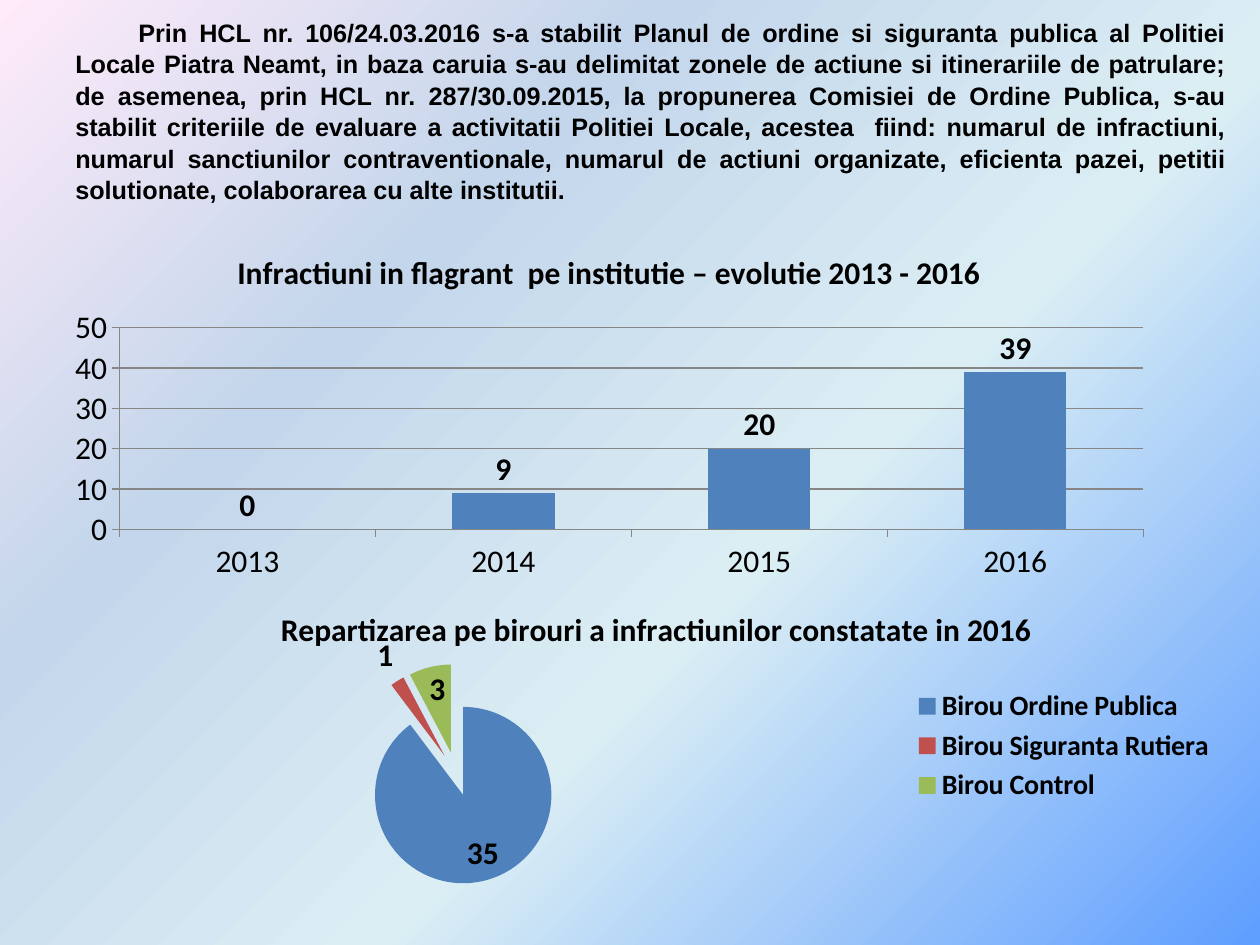
from lxml import etree
from pptx import Presentation
from pptx import util as u
from pptx.chart.data import CategoryChartData
from pptx.dml.color import RGBColor
from pptx.enum import chart as ch, text
from pptx.oxml import parse_xml
from pptx.oxml.ns import nsdecls, qn

W, H = 10, 7.5
COLORS = {"text": "000000", "grid": "868686",
          "blue": "4F81BD", "red": "C0504D", "green": "9BBB59"}
BACKGROUND = [(0, "5E9EFF"), (40, "DBEEF4"), (70, "C4D6EB"), (100, "FFEBFA")]

INTRO = ("Prin HCL nr. 106/24.03.2016 s-a stabilit Planul de ordine si siguranta "
         "publica al Politiei Locale Piatra Neamt, in baza caruia s-au delimitat "
         "zonele de actiune si itinerariile de patrulare; de asemenea, prin HCL nr. "
         "287/30.09.2015, la propunerea Comisiei de Ordine Publica, s-au stabilit "
         "criteriile de evaluare a activitatii Politiei Locale, acestea  fiind: "
         "numarul de infractiuni, numarul sanctiunilor contraventionale, numarul de "
         "actiuni organizate, eficienta pazei, petitii solutionate, colaborarea cu "
         "alte institutii.")


def rgb(name):
    return RGBColor.from_string(COLORS[name])


def style_font(font, size=18, bold=False, name="Calibri", color="text"):
    font.size, font.bold, font.name = u.Pt(size), bold, name
    font.color.rgb = rgb(color)


def add_run(p, content, **fmt):
    r = p.add_run()
    r.text = content
    style_font(r.font, **fmt)


def paint(fmt, color):
    fmt.fill.solid()
    fmt.fill.fore_color.rgb = rgb(color)


class Deck:
    """Holds the presentation, its style and the current slide."""

    def __init__(self):
        self.prs = Presentation()
        self.prs.slide_width, self.prs.slide_height = u.Inches(W), u.Inches(H)
        self.s = self.prs.slides.add_slide(self.prs.slide_layouts[6])

    def box(self, x, y, w, h):
        """Turn shares of the slide's size into lengths."""
        return [u.Inches(round(v * side, 2))
                for v, side in zip((x, y, w, h), (W, H, W, H))]

    def background(self, stops):
        fill = self.s.background.fill
        fill.gradient()
        old = self.s.background._cSld.find(".//" + qn("a:gradFill"))
        gs = "".join(f'<a:gs pos="{pos * 1000}"><a:srgbClr val="{c}"/></a:gs>'
                     for pos, c in stops)
        old.getparent().replace(old, parse_xml(
            f'<a:gradFill {nsdecls("a")} rotWithShape="1"><a:gsLst>{gs}</a:gsLst>'
            '<a:path path="circle"><a:fillToRect l="100000" t="100000"/></a:path>'
            '</a:gradFill>'))

    def paragraph(self, area, content, **fmt):
        tf = self.s.shapes.add_textbox(*self.box(*area)).text_frame
        tf.word_wrap = True
        tf.vertical_anchor = text.MSO_ANCHOR.MIDDLE
        p = tf.paragraphs[0]
        p.alignment = text.PP_ALIGN.JUSTIFY
        p.line_spacing = 1.04
        add_run(p, "\t" + content, **fmt)

    def chart(self, kind, area, title, values, label_position):
        data = CategoryChartData()
        data.categories = list(values)
        data.add_series("Series 1", list(values.values()))
        chart = self.s.shapes.add_chart(kind, *self.box(*area), data).chart
        style_font(chart.font)
        chart.has_title, chart.has_legend = True, False
        add_run(chart.chart_title.text_frame.paragraphs[0], title, bold=True)
        chart.chart_title.include_in_layout = False
        plot = chart.plots[0]
        labels = plot.series[0].data_labels
        labels.show_value = True
        labels.position = label_position
        style_font(labels.font, bold=True)
        return chart, plot

    def columns(self, area, title, values, color):
        chart, plot = self.chart(ch.XL_CHART_TYPE.COLUMN_CLUSTERED, area, title,
                                 values, ch.XL_LABEL_POSITION.OUTSIDE_END)
        plot.gap_width, plot.vary_by_categories = 150, False
        paint(plot.series[0].format, color)
        axis = chart.value_axis
        axis.minimum_scale, axis.maximum_scale, axis.major_unit = 0, 50, 10
        axis.has_major_gridlines = True
        for part in (axis, axis.major_gridlines, chart.category_axis):
            part.format.line.color.rgb = rgb("grid")
            part.format.line.width = u.Pt(0.75)

    def pie(self, area, title, values, colors, plot_area, explosion):
        chart, plot = self.chart(ch.XL_CHART_TYPE.PIE, area, title,
                                 values, ch.XL_LABEL_POSITION.BEST_FIT)
        plot.vary_by_categories = True
        series = plot.series[0]
        # Exploded slices: c:explosion comes before the data points
        for i, color in enumerate(colors):
            paint(series.points[i].format, color)
        ser = series._element
        explode = etree.Element(qn("c:explosion"), val=str(explosion))
        ser.find(qn("c:dPt")).addprevious(explode)
        # Legend
        chart.has_legend = True
        chart.legend.position = ch.XL_LEGEND_POSITION.RIGHT
        chart.legend.include_in_layout = False
        style_font(chart.legend.font, size=16, bold=True)
        # Inner plot area, as shares of the chart
        area_xml = chart._chartSpace.find(".//" + qn("c:plotArea"))
        for old in area_xml.findall(qn("c:layout")):
            area_xml.remove(old)
        sizes = "".join(f'<c:{tag} val="{v}"/>'
                        for tag, v in zip("xywh", plot_area))
        area_xml.insert(0, parse_xml(
            f'<c:layout {nsdecls("c")}><c:manualLayout><c:layoutTarget val="inner"/>'
            f'<c:xMode val="edge"/><c:yMode val="edge"/>{sizes}'
            '</c:manualLayout></c:layout>'))


def main():
    deck = Deck()
    deck.background(BACKGROUND)

    # Introduction
    deck.paragraph((0.05, 0, 0.933, 0.233), INTRO, size=14.4, bold=True, name="Arial")

    # Share of each office in 2016
    deck.pie((0.067, 0.623, 0.908, 0.333),
             "Repartizarea pe birouri a infractiunilor constatate in 2016",
             {"Birou Ordine Publica": 35, "Birou Siguranta Rutiera": 1,
              "Birou Control": 3},
             ("blue", "red", "green"), (0.02, 0.24, 0.61, 0.7), 25)

    # Evolution by year
    deck.columns((0.042, 0.244, 0.883, 0.377),
                 "Infractiuni in flagrant  pe institutie – evolutie 2013 - 2016",
                 {"2013": 0, "2014": 9, "2015": 20, "2016": 39}, "blue")

    deck.prs.save("out.pptx")


if __name__ == "__main__":
    main()
